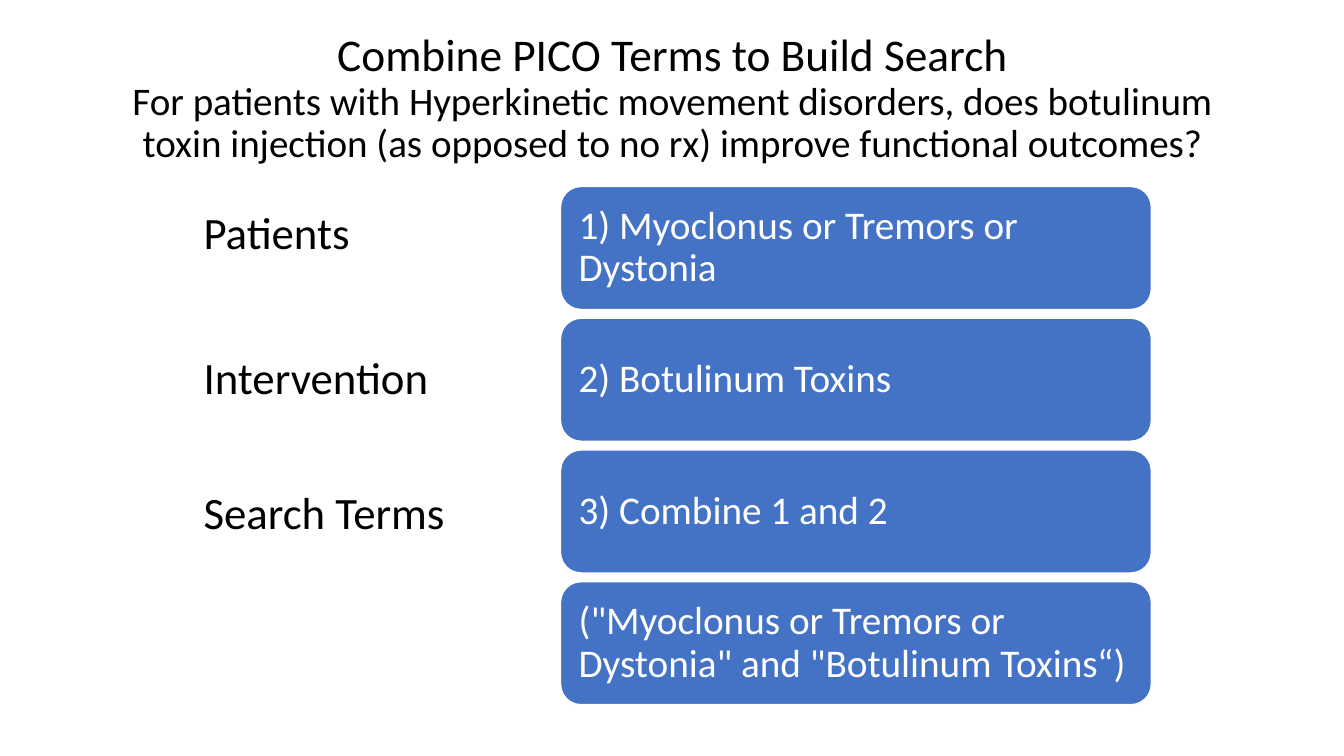
from pptx import Presentation
from pptx.dml.color import RGBColor
from pptx.enum.shapes import MSO_SHAPE as SHAPE
from pptx.enum.text import MSO_ANCHOR as ANCHOR, MSO_AUTO_SIZE as AUTO, PP_ALIGN as ALIGN
from pptx.util import Inches, Pt

BLACK = RGBColor(0x00, 0x00, 0x00)
WHITE = RGBColor(0xFF, 0xFF, 0xFF)
BLUE = RGBColor(0x44, 0x72, 0xC4)


def format_frame(tf, anchor, inset_x=0.1, inset_y=0.05):
    frame = dict(word_wrap=True, auto_size=AUTO.NONE, vertical_anchor=anchor,
                 margin_left=Inches(inset_x), margin_right=Inches(inset_x),
                 margin_top=Inches(inset_y), margin_bottom=Inches(inset_y))
    for name, value in frame.items():
        setattr(tf, name, value)


def add_text(p, text, size, color, align):
    p.alignment, p.line_spacing = align, 0.9
    r = p.add_run()
    r.text = text
    for name, value in dict(name="Calibri", size=Pt(size)).items():
        setattr(r.font, name, value)
    r.font.color.rgb = color


prs = Presentation()
prs.slide_width, prs.slide_height = Inches(13.33), Inches(7.5)
s = prs.slides.add_slide(prs.slide_layouts[5])

# Title and clinical question
title = s.shapes.title
title.left, title.top = Inches(0.92), Inches(0.23)
title.width, title.height = Inches(11.5), Inches(1.51)
format_frame(title.text_frame, ANCHOR.MIDDLE)
p = title.text_frame.paragraphs[0]
add_text(p, "Combine PICO Terms to Build Search", 32.4, BLACK, ALIGN.CENTER)
p.add_line_break()
add_text(p, "For patients with Hyperkinetic movement disorders, does botulinum "
            "toxin injection (as opposed to no rx) improve functional outcomes?",
         27.9, BLACK, ALIGN.CENTER)

# Row labels, spaced to sit beside the boxes
labels = s.shapes.add_textbox(Inches(1.92), Inches(2.04), Inches(2.98), Inches(4.76))
tf = labels.text_frame
format_frame(tf, ANCHOR.TOP)
for i, (label, gap) in enumerate([("Patients", 0), ("Intervention", 69), ("Search Terms", 62)]):
    p = tf.add_paragraph() if i else tf.paragraphs[0]
    p.space_before = Pt(gap)
    add_text(p, label, 32, BLACK, ALIGN.LEFT)

# Search boxes
searches = [
    "1) Myoclonus or Tremors or Dystonia",
    "2) Botulinum Toxins",
    "3) Combine 1 and 2",
    '("Myoclonus or Tremors or Dystonia" and "Botulinum Toxins“)',
]
for i, search in enumerate(searches):
    sp = s.shapes.add_shape(SHAPE.ROUNDED_RECTANGLE, Inches(5.56), Inches(1.85 + 1.307 * i),
                            Inches(5.86), Inches(1.22))
    sp.shadow.inherit = False
    sp.fill.solid()
    sp.fill.fore_color.rgb = BLUE
    sp.line.color.rgb = WHITE
    sp.line.width = Pt(1)
    format_frame(sp.text_frame, ANCHOR.MIDDLE, 0.12, 0.12)
    add_text(sp.text_frame.paragraphs[0], search, 28, WHITE, ALIGN.LEFT)

prs.save("out.pptx")
